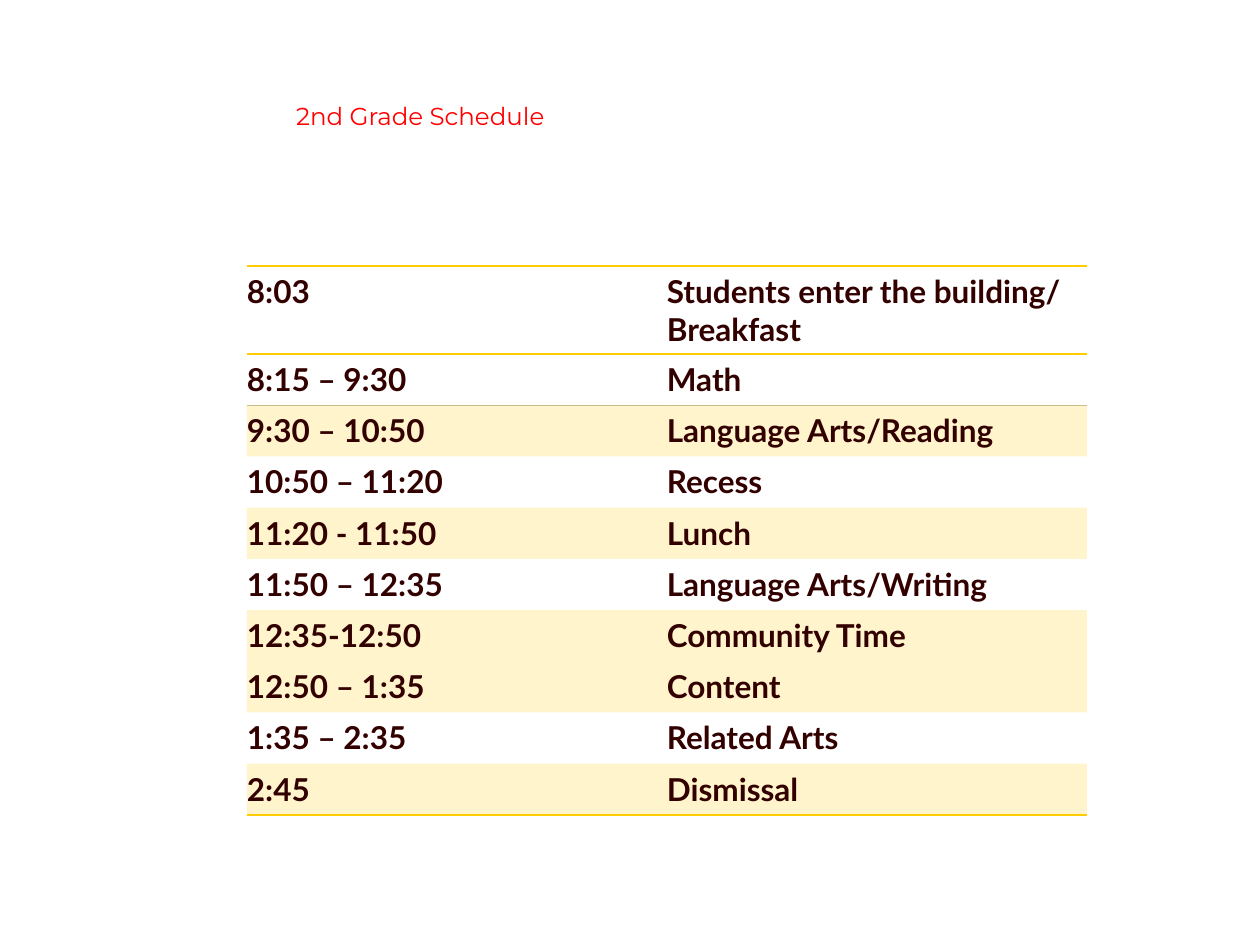
"""Build the 2nd grade schedule slide with its title and timetable."""
from lxml.etree import SubElement
from pptx import Presentation
from pptx.dml.color import RGBColor
from pptx.enum.text import MSO_ANCHOR, MSO_AUTO_SIZE, PP_ALIGN
from pptx.oxml.ns import qn
from pptx.util import Pt

PX = 3048
RED = RGBColor(0xFF, 0x00, 0x00)
BROWN = RGBColor(0x33, 0x00, 0x00)
GOLD = RGBColor(0xFF, 0xCC, 0x00)
TAN = RGBColor(0xCC, 0xBB, 0x88)


def write(frame, text, font="Lato", size=18, color=BROWN, bold=True):
    frame.word_wrap = True
    para = frame.paragraphs[0]
    para.alignment = PP_ALIGN.LEFT
    run = para.add_run()
    run.text = text
    run.font.name = font
    run.font.size = Pt(size)
    run.font.bold = bold
    run.font.color.rgb = color


def edge(cell, side, color=None, width=1):
    line = SubElement(cell._tc.get_or_add_tcPr(), qn("a:ln" + side), w=str(Pt(width)))
    if color is None:
        SubElement(line, qn("a:noFill"))
    else:
        fill = SubElement(line, qn("a:solidFill"))
        SubElement(fill, qn("a:srgbClr"), val=str(color))


deck = Presentation()
deck.slide_width = 3000 * PX
deck.slide_height = 2250 * PX
slide = deck.slides.add_slide(deck.slide_layouts[5])

title = slide.shapes.title
title.left, title.top = 675 * PX, 225 * PX
title.width, title.height = 1650 * PX, 275 * PX
title.text_frame.auto_size = MSO_AUTO_SIZE.NONE
title.text_frame.vertical_anchor = MSO_ANCHOR.TOP
write(title.text_frame, "2nd Grade Schedule", font="Montserrat", size=14, color=RED, bold=False)

plan = [
    ("8:03", "Students enter the building/ Breakfast", False),
    ("8:15 – 9:30", "Math", False),
    ("9:30 – 10:50", "Language Arts/Reading", True),
    ("10:50 – 11:20", "Recess", False),
    ("11:20 - 11:50", "Lunch", True),
    ("11:50 – 12:35", "Language Arts/Writing", False),
    ("12:35-12:50", "Community Time", True),
    ("12:50 – 1:35", "Content", True),
    ("1:35 – 2:35", "Related Arts", False),
    ("2:45", "Dismissal", True),
]
rules = {0: (GOLD, 1), 1: (GOLD, 1), 2: (TAN, 0.5), len(plan): (GOLD, 1)}

frame = slide.shapes.add_table(len(plan), 2, 588 * PX, 633 * PX, 2000 * PX, 1308 * PX)
table = frame.table
table.first_row = False
table.horz_banding = False
for col in table.columns:
    col.width = 1000 * PX

for row, (time, task, band) in enumerate(plan):
    table.rows[row].height = (122 if row else 210) * PX
    for col, text in enumerate((time, task)):
        cell = table.cell(row, col)
        cell.margin_left = cell.margin_right = 0
        cell.margin_top = cell.margin_bottom = 15 * PX
        write(cell.text_frame, text)
        edge(cell, "L")
        edge(cell, "R")
        edge(cell, "T", *rules.get(row, ()))
        edge(cell, "B", *rules.get(row + 1, ()))
        if band:
            cell.fill.solid()
            cell.fill.fore_color.rgb = GOLD
            tint = cell._tc.tcPr.find(qn("a:solidFill")).find(qn("a:srgbClr"))
            SubElement(tint, qn("a:alpha"), val="20000")
        else:
            cell.fill.background()

deck.save("out.pptx")
